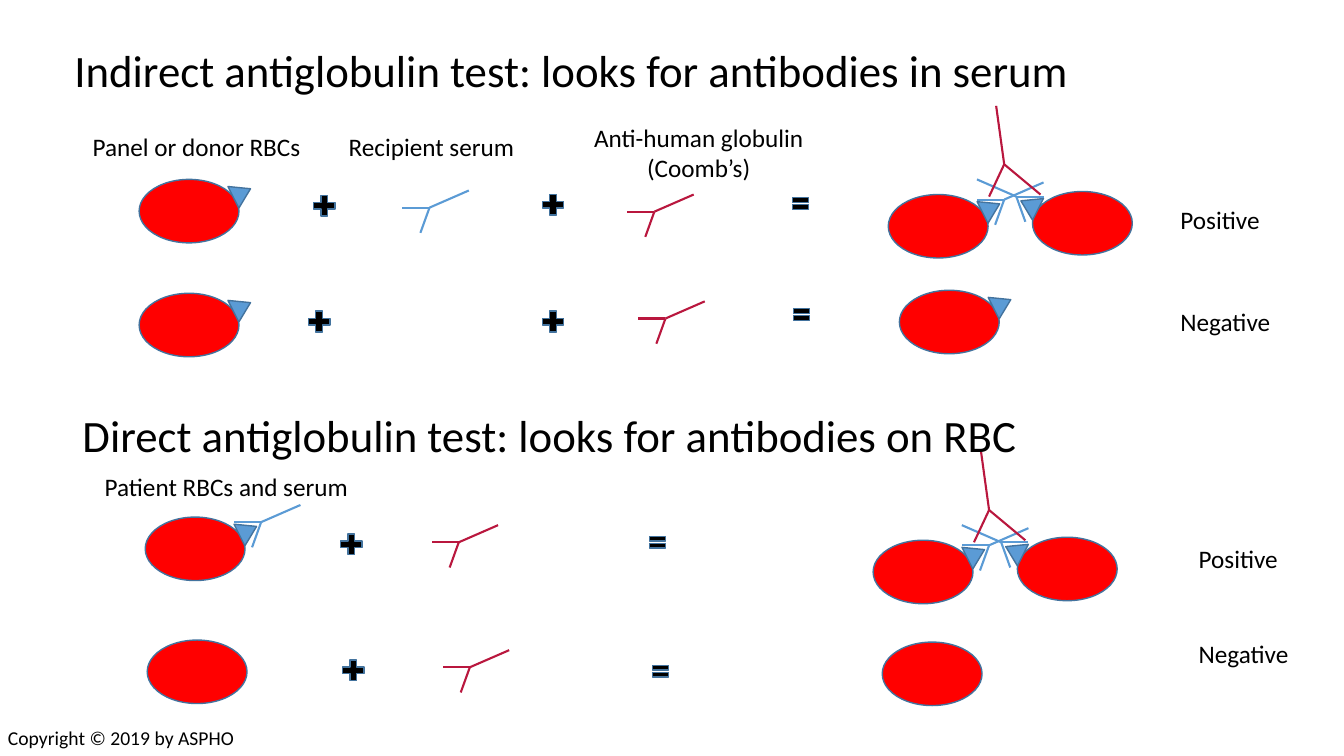
from dataclasses import dataclass

from lxml.etree import SubElement
from pptx import Presentation
from pptx.dml.color import RGBColor
from pptx.enum.shapes import MSO_CONNECTOR, MSO_SHAPE
from pptx.enum.text import MSO_ANCHOR, PP_ALIGN
from pptx.oxml.ns import qn
from pptx.util import Emu, Inches, Pt


@dataclass(frozen=True)
class Theme:
    font: str = "Calibri"
    ink: str = "000000"
    red_cell: str = "FF0000"
    serum: str = "5B9BD5"
    coombs: str = "B9173E"
    outline: str = "43739E"
    title: int = 32
    label: int = 18
    footer: int = 14


THEME = Theme()
COLS, ROWS = 13.33, 7.5
WIDTH, HEIGHT = Inches(COLS), Inches(ROWS)


def col(n):
    """Length of n grid columns."""
    return Emu(round(n * WIDTH / COLS))


def row(n):
    """Length of n grid rows."""
    return Emu(round(n * HEIGHT / ROWS))


def add_text(shapes, text, x, y, w, h=0.4, size=THEME.label, wrap=False,
             align=PP_ALIGN.LEFT, anchor=MSO_ANCHOR.TOP, spacing=1.0):
    tf = shapes.add_textbox(col(x), row(y), col(w), row(h)).text_frame
    tf.word_wrap = wrap
    tf.vertical_anchor = anchor
    tf.text = text
    for p in tf.paragraphs:
        p.alignment = align
        p.line_spacing = spacing
        p.font.name = THEME.font
        p.font.size = Pt(size)
        p.font.color.rgb = RGBColor.from_string(THEME.ink)


def add_solid(shapes, kind, x, y, w, h, fill, rotation=0):
    sp = shapes.add_shape(kind, col(x), row(y), col(w), row(h))
    sp.shadow.inherit = False
    sp.rotation = rotation
    sp.fill.solid()
    sp.fill.fore_color.rgb = RGBColor.from_string(fill)
    sp.line.color.rgb = RGBColor.from_string(THEME.outline)
    sp.line.width = Pt(1)


def add_arms(shapes, x, y, color, arms):
    """Lines that fan out from one joint."""
    group = shapes.add_group_shape().shapes
    for dx, dy in arms:
        line = group.add_connector(MSO_CONNECTOR.STRAIGHT, col(x), row(y),
                                   col(x + dx), row(y + dy))
        line.line.color.rgb = RGBColor.from_string(color)
        line.line.width = Pt(1.5)
        SubElement(line._element.spPr, qn("a:effectLst"))


def antibody(shapes, x, y, color=THEME.serum, side=1):
    arms = [(0.39, -0.17), (-0.09, 0.25), (-0.27, 0)]
    add_arms(shapes, x, y, color, [(side * dx, dy) for dx, dy in arms])


def coombs(shapes, x, y):
    antibody(shapes, x, y, THEME.coombs)


def bare_cell(shapes, x, y):
    add_solid(shapes, MSO_SHAPE.OVAL, x, y, 0.99, 0.63, THEME.red_cell)


def cell(shapes, x, y, side=1):
    """Red cell with an antigen on its right (side 1) or left (side -1)."""
    group = shapes.add_group_shape().shapes
    bare_cell(group, x, y)
    antigen_x = x + (0.9 if side == 1 else -0.15)
    add_solid(group, MSO_SHAPE.ISOSCELES_TRIANGLE, antigen_x, y + 0.04,
              0.24, 0.19, THEME.serum, side * 63.4)


def agglutinate(shapes, x, y):
    """Two coated cells bridged by anti-human globulin."""
    group = shapes.add_group_shape().shapes
    antibody(group, x + 1.27, y + 0.02, side=-1)
    cell(group, x + 1.43, y - 0.03, side=-1)
    antibody(group, x + 1.15, y + 0.05)
    cell(group, x, y)
    add_arms(group, x + 1.15, y - 0.3, THEME.coombs,
             [(-0.08, -0.58), (0.36, 0.3), (-0.15, 0.32)])


def plus(shapes, x, y):
    add_solid(shapes, MSO_SHAPE.MATH_PLUS, x, y, 0.29, 0.28, THEME.ink)


def equals(shapes, x, y):
    add_solid(shapes, MSO_SHAPE.MATH_EQUAL, x, y, 0.22, 0.2, THEME.ink)


def positive(shapes, x, y):
    add_text(shapes, "Positive", x, y, 1)


def negative(shapes, x, y):
    add_text(shapes, "Negative", x, y, 1.1)


def test_panel(shapes, x, y, title, labels, reactions):
    """One test: title, column labels and reaction rows, offset from x, y."""
    for reaction in reactions:
        for draw, dx, dy in reaction:
            draw(shapes, x + dx, y + dy)
    for text, dx, dy, w, h, align in labels:
        add_text(shapes, text, x + dx, y + dy, w, h, align=align)
    add_text(shapes, title, x, y, 11.5, 0.54, size=THEME.title, wrap=True,
             anchor=MSO_ANCHOR.MIDDLE, spacing=0.9)


INDIRECT_LABELS = [
    ("Panel or donor RBCs", 0.18, 0.8, 2.29, 0.4, PP_ALIGN.LEFT),
    ("Recipient serum", 2.72, 0.8, 1.86, 0.4, PP_ALIGN.LEFT),
    ("Anti-human globulin\n(Coomb’s)", 5.11, 0.71, 2.36, 0.71, PP_ALIGN.CENTER),
]
INDIRECT_REACTIONS = [
    [(cell, 0.74, 1.33), (plus, 2.43, 1.45), (antibody, 3.62, 1.61),
     (plus, 4.7, 1.44), (coombs, 5.85, 1.65), (equals, 7.19, 1.47),
     (agglutinate, 8.17, 1.48), (positive, 10.97, 1.53)],
    [(cell, 0.74, 2.46), (plus, 2.38, 2.6), (plus, 4.7, 2.6),
     (coombs, 5.96, 2.71), (equals, 7.2, 2.57), (cell, 8.28, 2.43),
     (negative, 10.97, 2.54)],
]
DIRECT_LABELS = [
    ("Patient RBCs and serum", 0.22, 0.55, 2.64, 0.4, PP_ALIGN.LEFT),
]
DIRECT_REACTIONS = [
    [(antibody, 1.87, 1.1), (cell, 0.72, 1.05), (plus, 2.62, 1.18),
     (coombs, 3.83, 1.3), (equals, 5.69, 1.2), (agglutinate, 7.94, 1.28),
     (positive, 11.07, 1.26)],
    [(bare_cell, 0.74, 2.27), (plus, 2.64, 2.43), (coombs, 3.94, 2.54),
     (equals, 5.72, 2.48), (bare_cell, 8.03, 2.29), (negative, 11.07, 2.2)],
]


def main():
    prs = Presentation()
    prs.slide_width, prs.slide_height = WIDTH, HEIGHT
    s = prs.slides.add_slide(prs.slide_layouts[6])
    test_panel(s.shapes, 0.64, 0.45,
               "Indirect antiglobulin test: looks for antibodies in serum",
               INDIRECT_LABELS, INDIRECT_REACTIONS)
    test_panel(s.shapes, 0.72, 4.08,
               "Direct antiglobulin test: looks for antibodies on RBC",
               DIRECT_LABELS, DIRECT_REACTIONS)
    add_text(s.shapes, "Copyright © 2019 by ASPHO", -0.02, 7.15, 3.4, 0.34,
             size=THEME.footer, wrap=True)
    prs.save("out.pptx")


if __name__ == "__main__":
    main()
